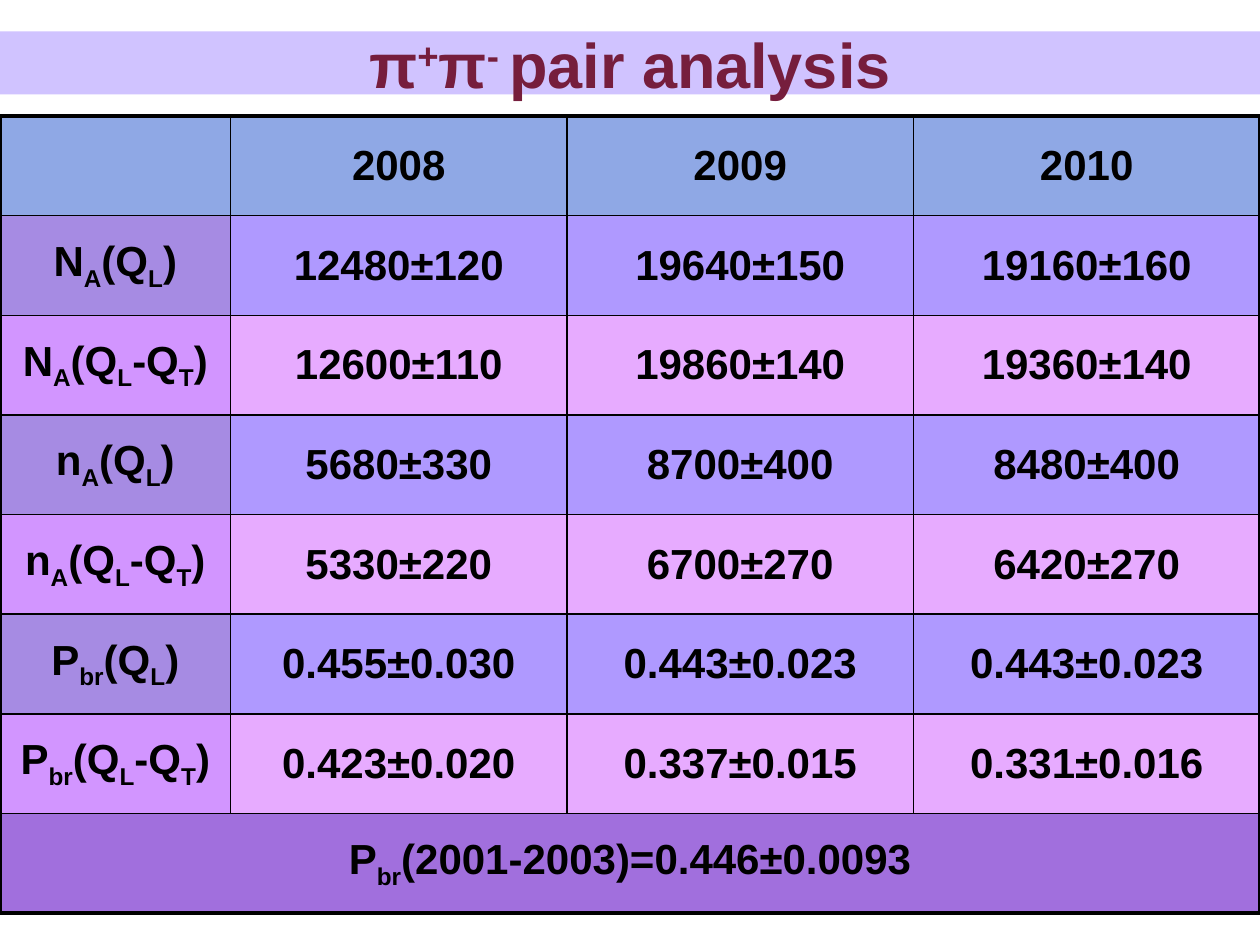
from lxml import etree
from pptx import Presentation
from pptx.dml.color import RGBColor
from pptx.enum.shapes import MSO_SHAPE
from pptx.enum.text import MSO_ANCHOR, PP_ALIGN
from pptx.oxml.ns import qn
from pptx.util import Pt

RECTANGLE = MSO_SHAPE.RECTANGLE
MIDDLE = MSO_ANCHOR.MIDDLE
CENTER = PP_ALIGN.CENTER

PX = 9144
BLACK = RGBColor(0x00, 0x00, 0x00)
MAROON = RGBColor(0x76, 0x1E, 0x3D)
LAVENDER = RGBColor(0xD0, 0xC3, 0xFF)
HEADER_BLUE = RGBColor(0x8F, 0xA8, 0xE5)
SUMMARY_PURPLE = RGBColor(0xA1, 0x6F, 0xDD)
BANDS = [
    (RGBColor(0xA6, 0x8B, 0xE3), RGBColor(0xAF, 0x99, 0xFF)),
    (RGBColor(0xD2, 0x95, 0xFF), RGBColor(0xE7, 0xAB, 0xFF)),
]

TITLE = "π|+|π|- |pair analysis"
YEARS = ["", "2008", "2009", "2010"]
RESULTS = [
    ["N|A|(Q|L|)", "12480±120", "19640±150", "19160±160"],
    ["N|A|(Q|L|-Q|T|)", "12600±110", "19860±140", "19360±140"],
    ["n|A|(Q|L|)", "5680±330", "8700±400", "8480±400"],
    ["n|A|(Q|L|-Q|T|)", "5330±220", "6700±270", "6420±270"],
    ["P|br|(Q|L|)", "0.455±0.030", "0.443±0.023", "0.443±0.023"],
    ["P|br|(Q|L|-Q|T|)", "0.423±0.020", "0.337±0.015", "0.331±0.016"],
]
SUMMARY = "P|br|(2001-2003)=0.446±0.0093"
COLUMN_WIDTHS = [183, 267, 275, 275]
THIN, THICK = 1, 2.25


def write_text(frame, text, size=24, color=BLACK, shift=-25, space_before=0):
    """Write centred bold text whose every second |-separated piece is shifted."""
    paragraph = frame.paragraphs[0]
    paragraph.alignment = CENTER
    if space_before:
        spacing = etree.SubElement(paragraph._p.get_or_add_pPr(), qn("a:spcBef"))
        etree.SubElement(spacing, qn("a:spcPct"), val=str(space_before * 1000))
    for index, piece in enumerate(text.split("|")):
        run = paragraph.add_run()
        run.text = piece
        run.font.name = "Arial"
        run.font.size = Pt(size)
        run.font.bold = True
        run.font.color.rgb = color
        if index % 2:
            run._r.get_or_add_rPr().set("baseline", str(shift * 1000))


def set_borders(cell, widths):
    """Draw black cell borders from a mapping of side letter to points."""
    properties = cell._tc.get_or_add_tcPr()
    for side, width in widths.items():
        line = etree.SubElement(properties, qn(f"a:ln{side}"), w=str(Pt(width)))
        fill = etree.SubElement(line, qn("a:solidFill"))
        etree.SubElement(fill, qn("a:srgbClr"), val=str(BLACK))


def add_title_band(slide, left, top, width, height):
    """Place the title on its full-width band."""
    band = slide.shapes.add_shape(
        RECTANGLE, left * PX, top * PX, width * PX, height * PX)
    band.shadow.inherit = False
    band.fill.solid()
    band.fill.fore_color.rgb = LAVENDER
    band.line.fill.background()
    band.text_frame.word_wrap = True
    band.text_frame.vertical_anchor = MIDDLE
    write_text(band.text_frame, TITLE, size=36, color=MAROON, shift=30)


def add_results_table(slide, left, top, width, height):
    """Place the yearly results with a merged summary row at the foot."""
    rows = [YEARS, *RESULTS, [SUMMARY, "", "", ""]]
    last_row, last_column = len(rows) - 1, len(YEARS) - 1
    results = slide.shapes.add_table(
        len(rows), len(YEARS),
        left * PX, top * PX, width * PX, height * PX).table
    results.first_row = False
    results.horz_banding = False
    for column, column_width in zip(results.columns, COLUMN_WIDTHS):
        column.width = column_width * PX
    results.cell(last_row, 0).merge(results.cell(last_row, last_column))

    for r, row in enumerate(rows):
        for c, text in enumerate(row):
            cell = results.cell(r, c)
            right_end = c + cell.span_width - 1
            set_borders(cell, {
                "L": THICK if c == 0 else THIN,
                "R": THICK if right_end == last_column else THIN,
                "T": THICK if r == 0 else THIN,
                "B": THICK if r == last_row else THIN,
            })
            label_fill, value_fill = BANDS[(r - 1) % 2]
            cell.fill.solid()
            if r == 0:
                cell.fill.fore_color.rgb = HEADER_BLUE
            elif r == last_row:
                cell.fill.fore_color.rgb = SUMMARY_PURPLE
            else:
                cell.fill.fore_color.rgb = value_fill if c else label_fill
            cell.vertical_anchor = MIDDLE
            if text:
                write_text(cell.text_frame, text, space_before=20)


def main():
    """Build and save the slide."""
    presentation = Presentation()
    presentation.slide_width = 1000 * PX
    presentation.slide_height = 750 * PX
    slide = presentation.slides.add_slide(presentation.slide_layouts[6])
    add_title_band(slide, 0, 25, 1000, 50)
    add_results_table(slide, 0, 92, 1000, 633)
    presentation.save("out.pptx")


if __name__ == "__main__":
    main()
